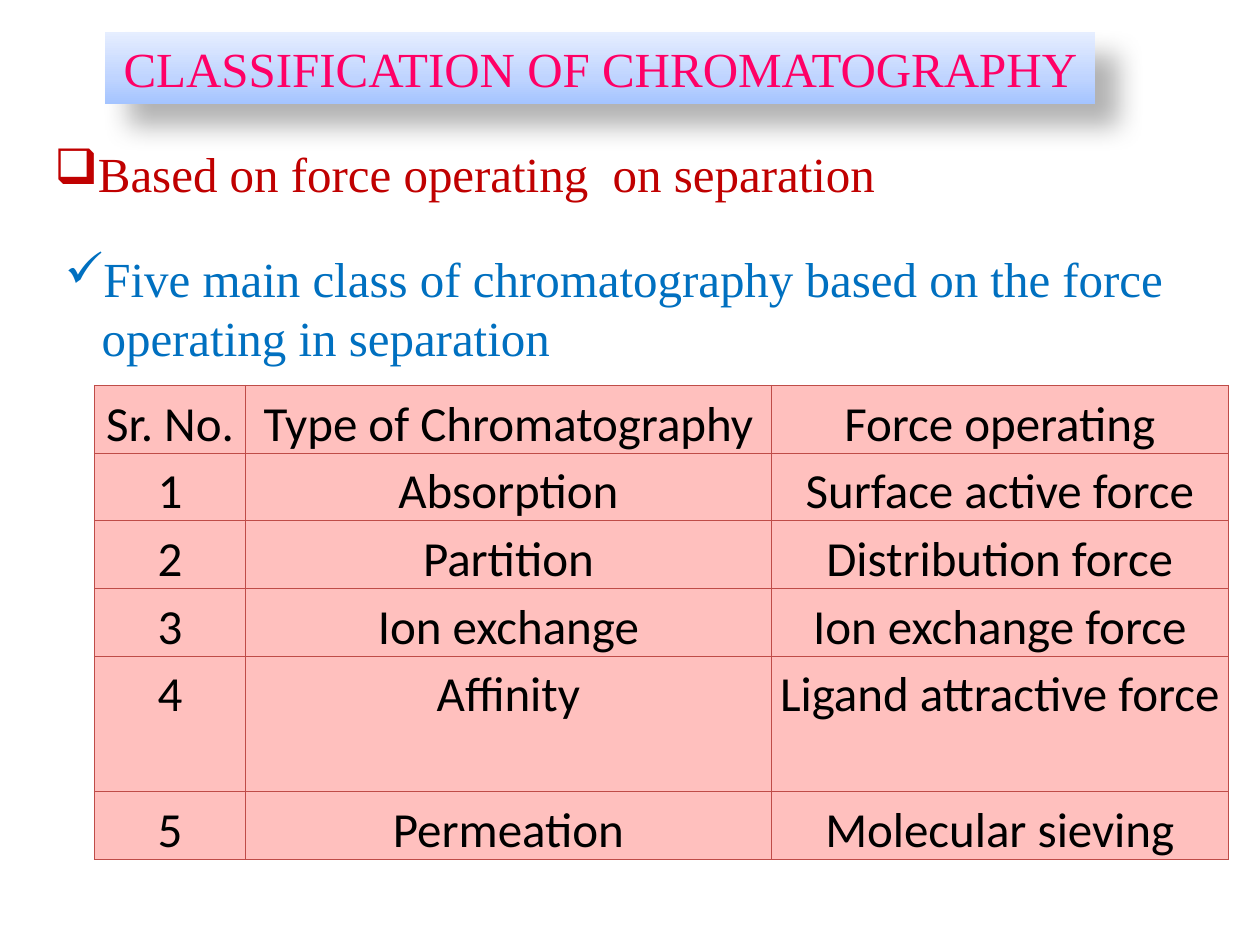
from copy import deepcopy

from lxml import etree
from pptx import Presentation
from pptx.dml.color import RGBColor
from pptx.enum.shapes import MSO_SHAPE
from pptx.enum.text import MSO_ANCHOR, MSO_AUTO_SIZE, PP_ALIGN
from pptx.oxml.ns import qn
from pptx.util import Pt

RECT = MSO_SHAPE.RECTANGLE
MIDDLE = MSO_ANCHOR.MIDDLE
GROW = MSO_AUTO_SIZE.SHAPE_TO_FIT_TEXT
CENTER = PP_ALIGN.CENTER
LEFT = PP_ALIGN.LEFT
SERIF = "Times New Roman"
SANS = "Calibri"
SIZE = 28

ROWS = [
    ("Sr. No.", "Type of Chromatography", "Force operating"),
    ("1", "Absorption", "Surface active force"),
    ("2", "Partition", "Distribution force"),
    ("3", "Ion exchange", "Ion exchange force"),
    ("4", "Affinity", "Ligand attractive force"),
    ("5", "Permeation", "Molecular sieving"),
]
SHARES = (1.2, 4.17, 3.63)
LINES = (1, 1, 1, 1, 2, 1)


def color(code):
    return RGBColor.from_string(code)


def add(parent, tag, **attrs):
    node = etree.SubElement(parent, qn(tag))
    for name, value in attrs.items():
        node.set(name, str(value))
    return node


def style(para, font, code, align):
    para.alignment = align
    para.font.name = font
    para.font.size = Pt(SIZE)
    para.font.color.rgb = color(code)


def write(frame, lines, code, align, wrap):
    frame.word_wrap = wrap
    frame.auto_size = GROW
    frame.vertical_anchor = MIDDLE
    frame.text = "\n".join(lines)
    for para in frame.paragraphs:
        style(para, SERIF, code, align)


def bullet(para, mark):
    props = para._p.get_or_add_pPr()
    props.set("marL", "0")
    props.set("indent", "0")
    node = etree.Element(qn("a:buChar"), char=mark)
    props.insert(0, node)


def banner(slide, box, text):
    shape = slide.shapes.add_shape(RECT, *map(Pt, box))
    shape.line.fill.background()
    shape.fill.gradient()
    shape.fill.gradient_angle = 90
    stops = shape.element.spPr.find(".//" + qn("a:gsLst"))
    stops.append(deepcopy(stops[0]))
    tints = ((0, "A4C4FF"), (0.35, "BFD4FF"), (1, "E6EEFF"))
    for stop, (place, code) in zip(shape.fill.gradient_stops, tints):
        stop.position = place
        stop.color.rgb = color(code)
    effects = add(shape.element.spPr, "a:effectLst")
    shade = add(effects, "a:outerShdw", blurRad=Pt(15), dist=Pt(18),
                dir=45 * 60000, algn="tl", rotWithShape=0)
    add(add(shade, "a:srgbClr", val="000000"), "a:alpha", val=30000)
    write(shape.text_frame, [text], "FF0066", CENTER, False)


def note(slide, box, lines, code, mark, wrap):
    frame = slide.shapes.add_textbox(*map(Pt, box)).text_frame
    write(frame, lines, code, LEFT, wrap)
    first, *rest = frame.paragraphs
    bullet(first, mark)
    for para in rest:
        props = para._p.get_or_add_pPr()
        props.set("marL", str(Pt(21)))
        props.set("indent", "0")


def border(cell, code, width):
    props = cell._tc.get_or_add_tcPr()
    for side in "LRTB":
        line = add(props, "a:ln" + side, w=Pt(width))
        add(add(line, "a:solidFill"), "a:srgbClr", val=code)


def fill(cell, text):
    border(cell, "BF4C48", 0.75)
    cell.fill.solid()
    cell.fill.fore_color.rgb = color("FFC0BE")
    cell.margin_left = cell.margin_right = Pt(5)
    cell.margin_top = cell.margin_bottom = 0
    cell.text = text
    para = cell.text_frame.paragraphs[0]
    style(para, SANS, "000000", CENTER)
    para.line_spacing = 1.15


def grid(slide, box):
    width, height = box[2:]
    frame = slide.shapes.add_table(len(ROWS), len(SHARES), *map(Pt, box))
    table = frame.table
    for col, share in zip(table.columns, SHARES):
        col.width = Pt(width * share / sum(SHARES))
    for row, count, texts in zip(table.rows, LINES, ROWS):
        row.height = Pt(height * count / sum(LINES))
        for cell, text in zip(row.cells, texts):
            fill(cell, text)


def main():
    deck = Presentation()
    deck.slide_width = Pt(720)
    deck.slide_height = Pt(540)
    slide = deck.slides.add_slide(deck.slide_layouts[6])
    banner(slide, (60, 18, 566, 41.2), "CLASSIFICATION OF CHROMATOGRAPHY")
    note(slide, (24, 78, 488, 41.2),
         ["Based on force operating  on separation"], "C00000", "❑", False)
    note(slide, (30, 138, 678, 75),
         ["Five main class of chromatography based on the force",
          "operating in separation"], "0070C0", "✓", True)
    grid(slide, (54, 220.3, 648, 270.7))
    deck.save("out.pptx")


if __name__ == "__main__":
    main()
